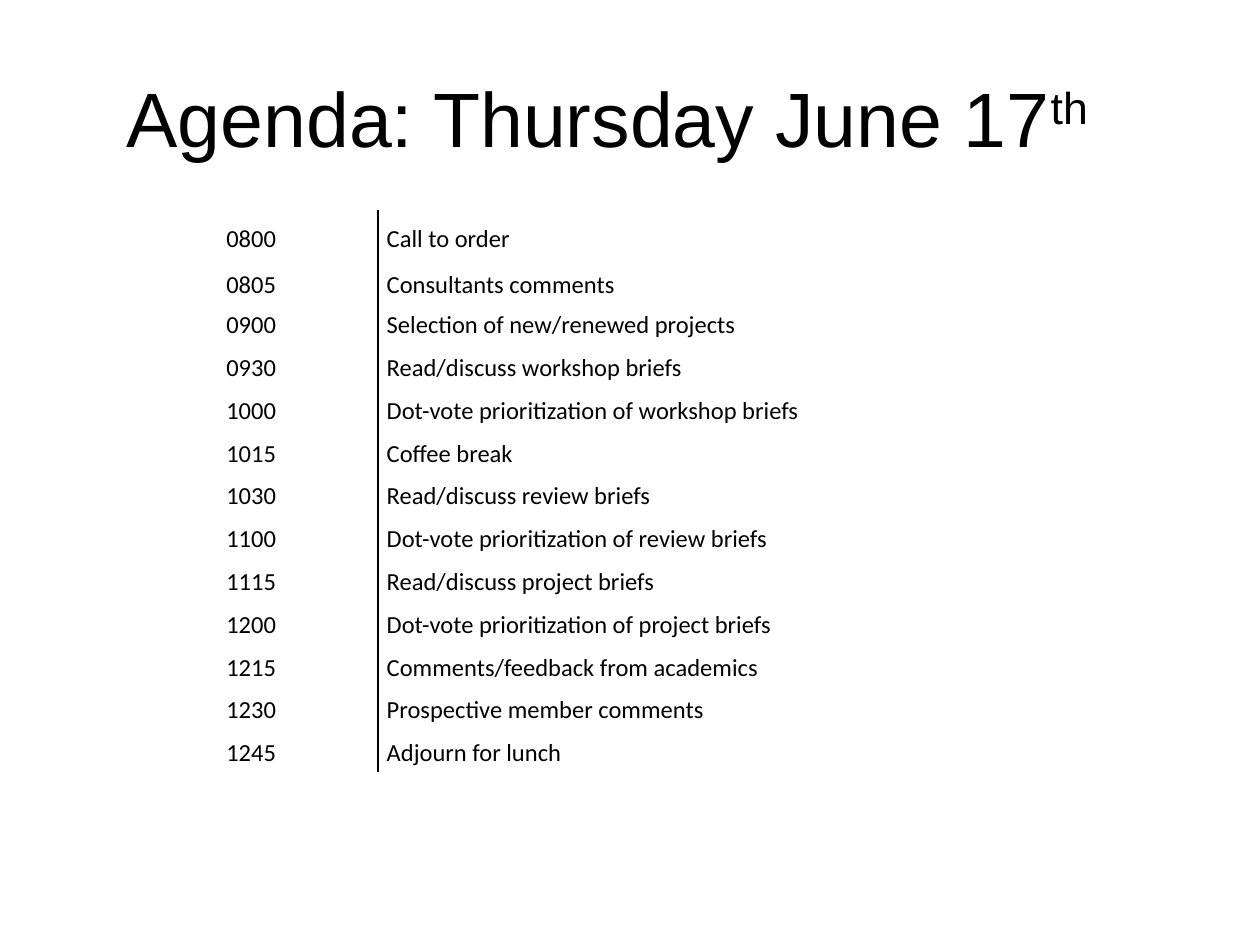
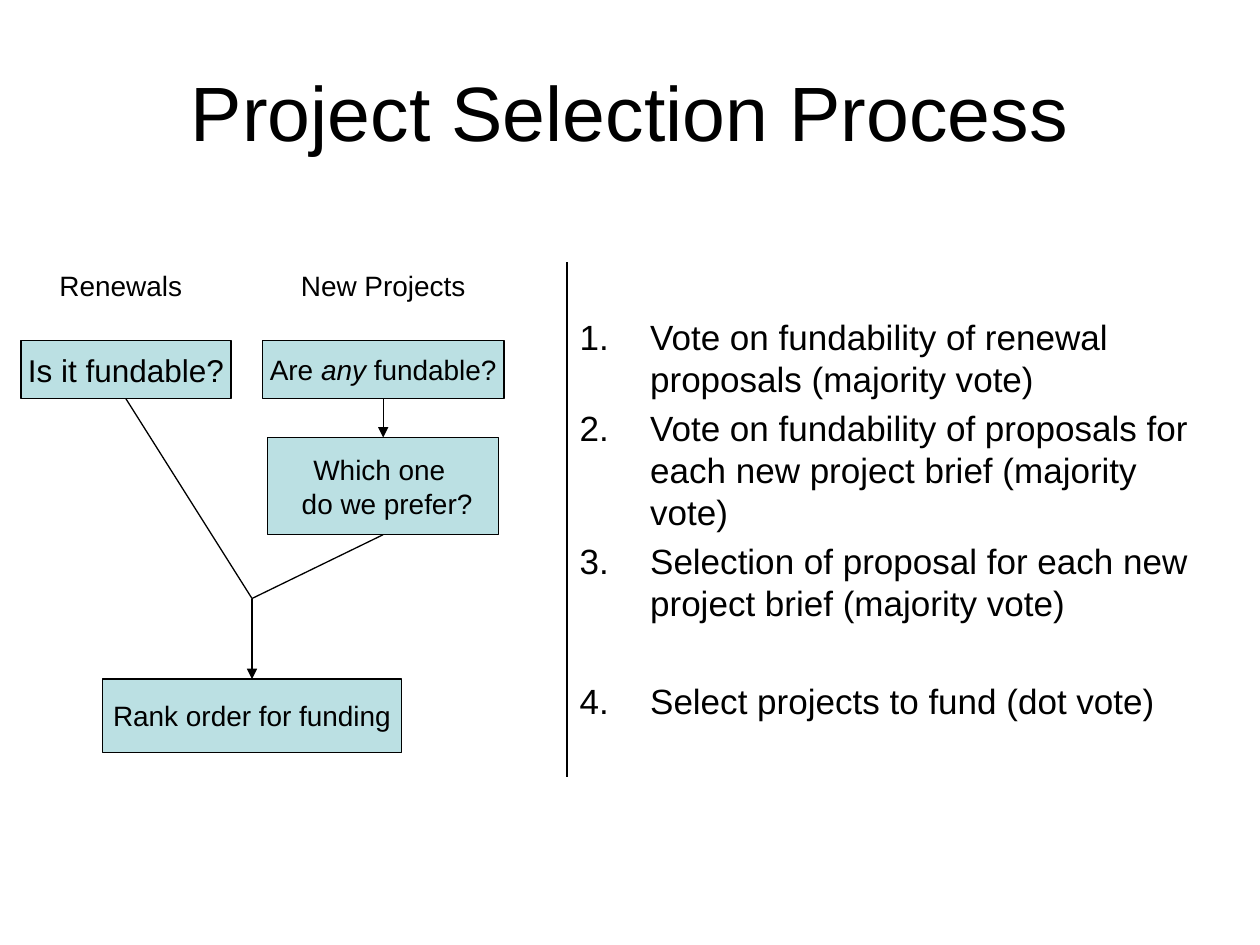
from dataclasses import dataclass

from lxml.etree import SubElement
from pptx import Presentation
from pptx.dml.color import RGBColor
from pptx.enum.shapes import MSO_CONNECTOR, MSO_SHAPE
from pptx.enum.text import MSO_ANCHOR, MSO_AUTO_SIZE, PP_ALIGN
from pptx.oxml.ns import qn
from pptx.util import Inches, Pt

BLACK, PALE_TEAL = "000000", "BBE0E3"
TITLE_FONT, TABLE_FONT = "Arial", "Calibri"
COLUMNS, ROWS = 120, 90  # the slide grid: twelve units to the inch
NO_TABLE_STYLE = "{2D5ABB26-0587-4C30-8999-92F81FD0307C}"
TITLE_AND_BODY, TITLE_ONLY = 1, 5

AGENDA = [
    ("0800", "Call to order"),
    ("0805", "Consultants comments"),
    ("0900", "Selection of new/renewed projects"),
    ("0930", "Read/discuss workshop briefs"),
    ("1000", "Dot-vote prioritization of workshop briefs"),
    ("1015", "Coffee break"),
    ("1030", "Read/discuss review briefs"),
    ("1100", "Dot-vote prioritization of review briefs"),
    ("1115", "Read/discuss project briefs"),
    ("1200", "Dot-vote prioritization of project briefs"),
    ("1215", "Comments/feedback from academics"),
    ("1230", "Prospective member comments"),
    ("1245", "Adjourn for lunch"),
]
VOTING_STEPS = [
    "Vote on fundability of renewal proposals (majority vote)",
    "Vote on fundability of proposals for each new project brief (majority vote)",
    "Selection of proposal for each new project brief (majority vote)",
    "Select projects to fund (dot vote)",
]


def grid(units):
    return Inches(units / 12)


@dataclass
class Box:
    """A rectangle measured in grid units."""
    left: float
    top: float
    width: float
    height: float

    def inner(self, left, top, width, height):
        return Box(self.left + left, self.top + top, width, height)

    def point(self, across, down):
        return self.left + across, self.top + down

    def top_middle(self):
        return self.point(self.width / 2, 0)

    def bottom_middle(self):
        return self.point(self.width / 2, self.height)

    def lengths(self):
        return [grid(n) for n in (self.left, self.top, self.width, self.height)]


def color(hex_string):
    return RGBColor.from_string(hex_string)


def add_text(paragraph, text, size=16, font=TITLE_FONT, italic=None,
             align=PP_ALIGN.CENTER):
    paragraph.alignment = align
    run = paragraph.add_run()
    run.text = text
    run.font.size = Pt(size)
    run.font.name = font
    run.font.italic = italic
    run.font.color.rgb = color(BLACK)
    return run


def place(shape, box):
    shape.left, shape.top, shape.width, shape.height = box.lengths()


def add_title(slide, text, top):
    title = slide.shapes.title
    place(title, Box(6, top, 108, 15))
    frame = title.text_frame
    frame.auto_size = MSO_AUTO_SIZE.NONE
    frame.vertical_anchor = MSO_ANCHOR.MIDDLE
    add_text(frame.paragraphs[0], text, size=44)
    return frame


def add_line(slide, start, end, arrow=False):
    line = slide.shapes.add_connector(
        MSO_CONNECTOR.STRAIGHT, *(grid(n) for n in (*start, *end)))
    line.line.color.rgb = color(BLACK)
    line.line.width = Pt(0.75)
    if arrow:
        SubElement(line.line._get_or_add_ln(), qn("a:tailEnd"), type="triangle")
    SubElement(line._element.spPr, qn("a:effectLst"))


def add_label(slide, box, text):
    label = slide.shapes.add_textbox(*box.lengths())
    label.text_frame.word_wrap = True
    add_text(label.text_frame.paragraphs[0], text)


def add_step(slide, box, *lines, size=16):
    """Each line is a list of (text, italic) runs."""
    step = slide.shapes.add_shape(MSO_SHAPE.RECTANGLE, *box.lengths())
    step.shadow.inherit = False
    step.fill.solid()
    step.fill.fore_color.rgb = color(PALE_TEAL)
    step.line.color.rgb = color(BLACK)
    step.line.width = Pt(0.75)
    frame = step.text_frame
    frame.word_wrap = False
    frame.vertical_anchor = MSO_ANCHOR.MIDDLE
    for index, line in enumerate(lines):
        paragraph = frame.add_paragraph() if index else frame.paragraphs[0]
        for text, italic in line:
            add_text(paragraph, text, size=size, italic=italic)


def add_cell_border(cell, side):
    border = SubElement(cell._tc.get_or_add_tcPr(), qn(f"a:{side}"), w=str(Pt(1)))
    fill = SubElement(border, qn("a:solidFill"))
    SubElement(fill, qn("a:srgbClr"), val=BLACK)


def add_agenda_table(slide, box):
    table = slide.shapes.add_table(len(AGENDA), 2, *box.lengths()).table
    table.first_row = table.horz_banding = False
    table._tbl.tblPr.find(qn("a:tableStyleId")).text = NO_TABLE_STYLE
    time_width = 22
    table.columns[0].width = grid(time_width)
    table.columns[1].width = grid(box.width - time_width)
    first_heights = [5.04, 3.72]
    other_height = (box.height - sum(first_heights)) / (len(AGENDA) - 2)
    heights = first_heights + [other_height] * (len(AGENDA) - 2)
    for row, height, entry in zip(table.rows, heights, AGENDA):
        row.height = grid(height)
        for cell, text, side, indent in zip(row.cells, entry, ("lnR", "lnL"), (0.56, 0)):
            cell.margin_left = cell.margin_right = Inches(0.07)
            cell.margin_top = cell.margin_bottom = 0
            cell.vertical_anchor = MSO_ANCHOR.MIDDLE
            add_cell_border(cell, side)
            cell.fill.background()
            paragraph = cell.text_frame.paragraphs[0]
            paragraph.line_spacing = 1.15
            paragraph._p.get_or_add_pPr().set("marL", str(Inches(indent)))
            add_text(paragraph, text, size=14, font=TABLE_FONT, align=PP_ALIGN.LEFT)


def add_flowchart(slide, box):
    add_label(slide, box.inner(0, 0, 21, 4.44), "Renewals")
    add_label(slide, box.inner(24, 0, 23, 4.44), "New Projects")

    renewal = box.inner(1, 7.44, 20, 5.55)
    new_project = box.inner(24, 7.44, 23, 5.55)
    preference = box.inner(24.5, 16.67, 22, 9.25)
    ranking = box.inner(8.75, 39.67, 28.5, 7)
    merge = box.point(23, 32)

    add_step(slide, renewal, [("Is it fundable?", None)], size=18)
    add_step(slide, new_project,
             [("Are ", None), ("any", True), (" fundable?", None)])
    add_step(slide, preference,
             [("Which one ", None)], [(" do we prefer?", None)])
    add_step(slide, ranking, [("Rank order for funding", None)])

    add_line(slide, new_project.bottom_middle(), preference.top_middle(), arrow=True)
    add_line(slide, merge, ranking.top_middle(), arrow=True)
    add_line(slide, preference.bottom_middle(), merge)
    add_line(slide, renewal.bottom_middle(), merge)


def add_voting_list(slide, box):
    body = slide.placeholders[1]
    place(body, box)
    frame = body.text_frame
    frame.auto_size = MSO_AUTO_SIZE.NONE
    for index, text in enumerate(VOTING_STEPS):
        paragraph = frame.add_paragraph() if index else frame.paragraphs[0]
        is_last = index == len(VOTING_STEPS) - 1
        paragraph.space_before = Pt(32 if is_last else 4)
        properties = paragraph._p.get_or_add_pPr()
        properties.set("marL", str(Inches(0.56)))
        properties.set("indent", str(Inches(-0.56)))
        SubElement(properties, qn("a:buFont"), typeface=TITLE_FONT)
        SubElement(properties, qn("a:buAutoNum"), type="arabicPeriod")
        add_text(paragraph, text, size=20, align=PP_ALIGN.LEFT)


def build_agenda_slide(presentation):
    slide = presentation.slides.add_slide(presentation.slide_layouts[TITLE_ONLY])
    frame = add_title(slide, "Agenda: Thursday June 17", top=3.6)
    frame.margin_right = Inches(0.46)
    ordinal = add_text(frame.paragraphs[0], "th", size=44)
    ordinal.font._element.set("baseline", "30000")
    add_agenda_table(slide, Box(14, 20, 95, 53.6))


def build_selection_slide(presentation):
    slide = presentation.slides.add_slide(presentation.slide_layouts[TITLE_AND_BODY])
    add_title(slide, "Project Selection Process", top=3)
    add_voting_list(slide, Box(54, 29.4, 61, 45.7))
    add_flowchart(slide, Box(1, 25, 47, 46.67))
    add_line(slide, (54, 25), (54, 74))


def main():
    presentation = Presentation()
    presentation.slide_width, presentation.slide_height = grid(COLUMNS), grid(ROWS)
    build_agenda_slide(presentation)
    build_selection_slide(presentation)
    presentation.save("out.pptx")


if __name__ == "__main__":
    main()
